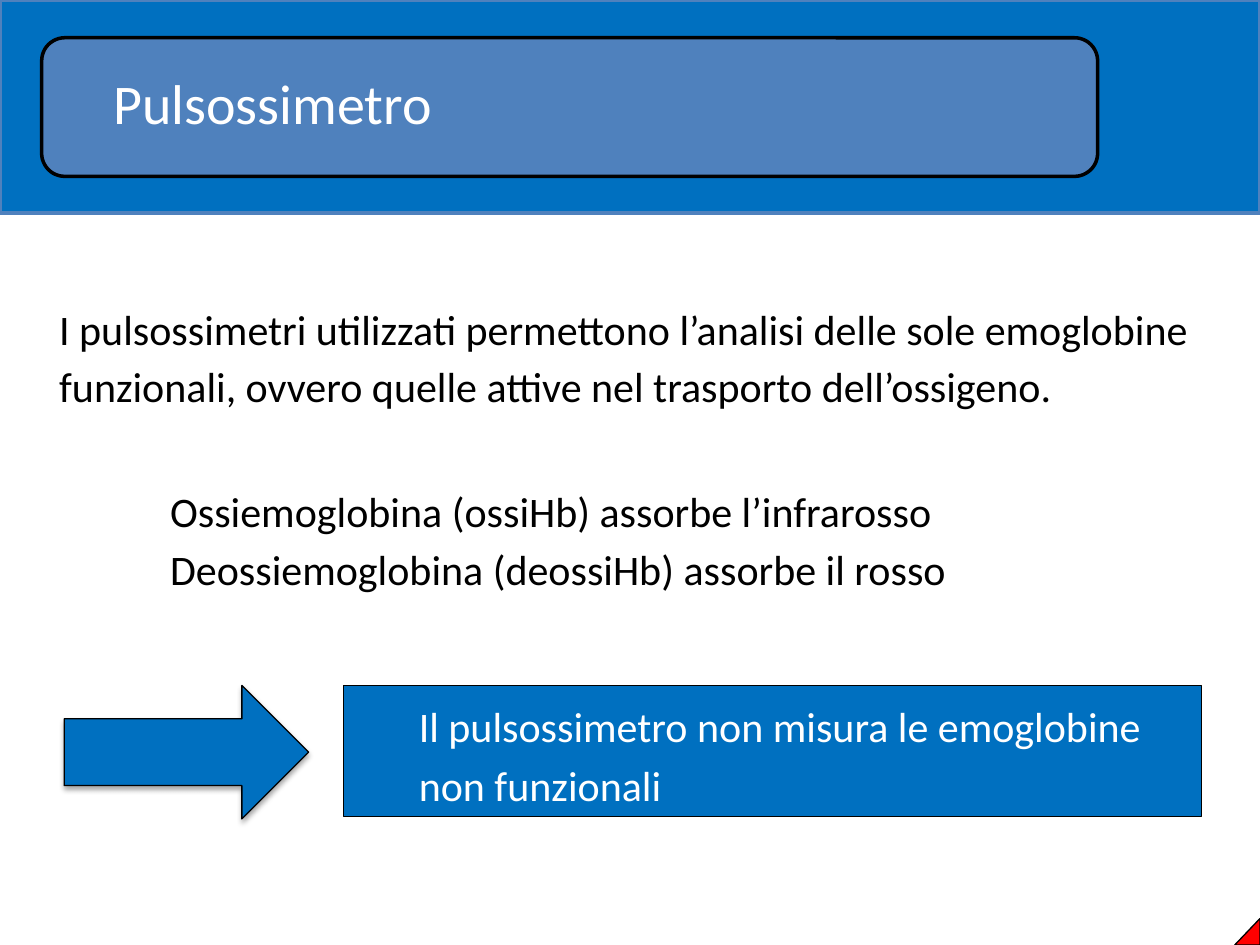
from lxml import etree
from pptx import Presentation
from pptx.dml.color import RGBColor
from pptx.enum import shapes, text as t
from pptx.oxml import ns
from pptx.util import Pt

HUES = {"blue": "0070C0", "steel": "4F81BD", "red": "FF0000",
        "black": "000000", "white": "FFFFFF"}
KIND = shapes.MSO_SHAPE


def hue(name):
    return RGBColor.from_string(HUES[name])


def place(item, left, top, width, height):
    item.left, item.top = Pt(left), Pt(top)
    item.width, item.height = Pt(width), Pt(height)


def draw(slide, kind, box, fill, line="black", thick=0.75):
    item = slide.shapes.add_shape(kind, *map(Pt, box))
    item.shadow.inherit = False
    item.fill.solid()
    item.fill.fore_color.rgb = hue(fill)
    item.line.color.rgb = hue(line)
    item.line.width = Pt(thick)
    return item


def write(item, lines, size=24, color="black", lead=Pt(32.8), indent=0,
          anchor=t.MSO_ANCHOR.TOP, inset=(7.2, 3.6)):
    """Fill an item with unbulleted, left-aligned lines."""
    frame = item.text_frame
    frame.word_wrap = True
    frame.auto_size = t.MSO_AUTO_SIZE.NONE
    frame.vertical_anchor = anchor
    frame.margin_left = frame.margin_right = Pt(inset[0])
    frame.margin_top = frame.margin_bottom = Pt(inset[1])
    frame.text = "\n".join(lines)
    for para in frame.paragraphs:
        para.alignment = t.PP_ALIGN.LEFT
        para.line_spacing = lead
        para.space_before = Pt(0)
        props = para._p.get_or_add_pPr()
        props.set("marL", str(Pt(indent)))
        props.set("indent", "0")
        etree.SubElement(props, ns.qn("a:buNone"))
        for run in para.runs:
            run.font.name = "Calibri"
            run.font.size = Pt(size)
            run.font.color.rgb = hue(color)


def shade(item):
    """Give the item a soft shadow straight below it."""
    effects = item._element.spPr.find(ns.qn("a:effectLst"))
    outer = etree.SubElement(
        effects, ns.qn("a:outerShdw"), blurRad=str(Pt(3.1)),
        dist=str(Pt(1.8)), dir="5400000", rotWithShape="0")
    tint = etree.SubElement(outer, ns.qn("a:srgbClr"), val=HUES["black"])
    etree.SubElement(tint, ns.qn("a:alpha"), val="35000")


def head(slide):
    draw(slide, KIND.RECTANGLE, (0, 0, 720, 121.7), "blue", "steel", 2)
    draw(slide, KIND.ROUNDED_RECTANGLE, (23.8, 21.6, 603.4, 79.2),
         "steel", thick=2)
    title = slide.shapes.title
    place(title, 49.7, 25.2, 575.3, 71.3)
    write(title, ["Pulsossimetro"], size=32, color="white", lead=0.9,
          anchor=t.MSO_ANCHOR.MIDDLE, inset=(15.1, 0))
    slide.shapes._spTree.append(title._element)  # in front of the banner


def body(slide):
    intro, list_ = slide.placeholders[1], slide.placeholders[2]
    place(intro, 26.6, 165.6, 679, 72.7)
    write(intro, ["I pulsossimetri utilizzati permettono l’analisi delle sole "
                  "emoglobine funzionali, ovvero quelle attive nel trasporto "
                  "dell’ossigeno."])
    place(list_, 90, 270, 596.2, 72.7)
    write(list_, ["Ossiemoglobina (ossiHb) assorbe l’infrarosso",
                  "Deossiemoglobina (deossiHb) assorbe il rosso"])


def note(slide):
    shade(draw(slide, KIND.RIGHT_ARROW, (36.7, 391.7, 139.7, 76.3), "blue"))
    box = draw(slide, KIND.RECTANGLE, (196.2, 391.7, 490.3, 74.9), "blue")
    write(box, ["Il pulsossimetro non misura le emoglobine non funzionali"],
          color="white", lead=Pt(33.8), indent=36)


def main():
    deck = Presentation()
    deck.slide_width, deck.slide_height = Pt(720), Pt(540)
    slide = deck.slides.add_slide(deck.slide_layouts[3])
    head(slide)
    body(slide)
    note(slide)
    nook = draw(slide, KIND.RIGHT_TRIANGLE, (705.6, 524.9, 14.4, 15.1), "red")
    nook._element.spPr.get_or_add_xfrm().set("flipH", "1")
    deck.save("out.pptx")


if __name__ == "__main__":
    main()
